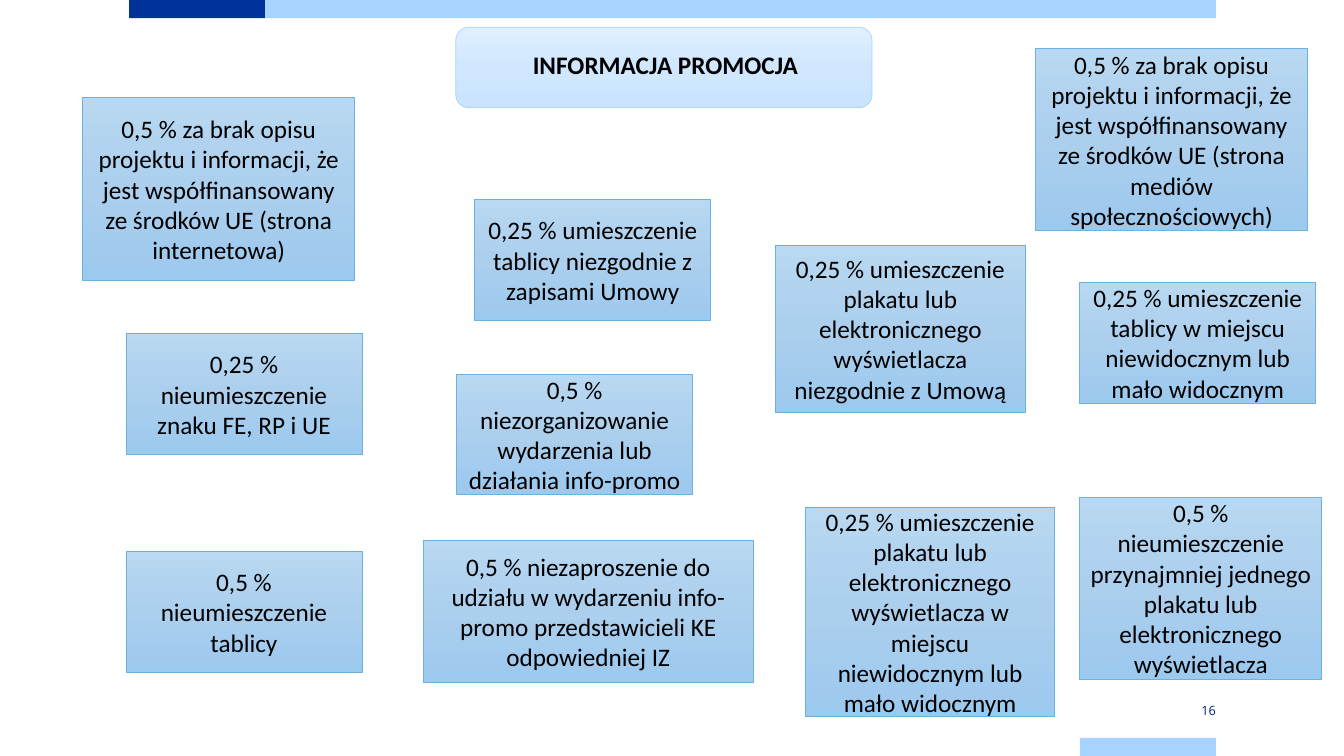
from copy import deepcopy

from pptx import Presentation
from pptx.dml.color import RGBColor
from pptx.enum.shapes import MSO_SHAPE
from pptx.enum.text import MSO_ANCHOR, PP_ALIGN
from pptx.oxml.ns import qn
from pptx.util import Inches, Pt

RECTANGLE = MSO_SHAPE.RECTANGLE
ROUNDED = MSO_SHAPE.FLOWCHART_ALTERNATE_PROCESS
MIDDLE = MSO_ANCHOR.MIDDLE
CENTER, RIGHT = PP_ALIGN.CENTER, PP_ALIGN.RIGHT

BLACK = RGBColor(0x00, 0x00, 0x00)
NAVY = RGBColor(0x00, 0x20, 0x73)
EU_BLUE = RGBColor(0x00, 0x33, 0x99)
SKY = RGBColor(0xA6, 0xD3, 0xFF)
CARD_LINE = RGBColor(0x6B, 0xB1, 0xE2)
CARD_SHADES = (RGBColor(0xB9, 0xD8, 0xF1), RGBColor(0xAB, 0xCF, 0xED),
               RGBColor(0x9C, 0xC9, 0xEE))
HEADING_SHADES = (RGBColor(0xE1, 0xF0, 0xFF), RGBColor(0xD0, 0xE7, 0xFF),
                  RGBColor(0xCA, 0xE4, 0xFF))

SMALL = (2.34, 1.2)
LARGE = (2.7, 1.81)
PENALTIES = [
    (0.82, 0.97, LARGE, "0,5 % za brak opisu projektu i informacji, że jest "
     "współfinansowany ze środków UE (strona internetowa)"),
    (10.27, 0.48, LARGE, "0,5 % za brak opisu projektu i informacji, że jest "
     "współfinansowany ze środków UE (strona mediów społecznościowych)"),
    (1.25, 3.31, SMALL, "0,25 % nieumieszczenie znaku FE, RP i UE"),
    (1.25, 5.47, SMALL, "0,5 % nieumieszczenie tablicy"),
    (7.69, 2.43, (2.48, 1.66), "0,25 % umieszczenie plakatu lub "
     "elektronicznego wyświetlacza niezgodnie z Umową"),
    (4.71, 1.98, SMALL, "0,25 % umieszczenie tablicy niezgodnie z zapisami Umowy"),
    (10.71, 4.93, (2.4, 1.81), "0,5 % nieumieszczenie przynajmniej jednego "
     "plakatu lub elektronicznego wyświetlacza"),
    (4.53, 3.71, SMALL, "0,5 % niezorganizowanie wydarzenia lub działania info-promo"),
    (7.99, 5.03, (2.47, 2.08), "0,25 % umieszczenie plakatu lub elektronicznego "
     "wyświetlacza w miejscu niewidocznym lub mało widocznym"),
    (10.71, 2.8, SMALL, "0,25 % umieszczenie tablicy w miejscu niewidocznym "
     "lub mało widocznym"),
    (4.2, 5.36, (3.27, 1.41), "0,5 % niezaproszenie do udziału w wydarzeniu "
     "info-promo przedstawicieli KE odpowiedniej IZ"),
]


class PenaltySlide:
    font = "Calibri"
    size = 18

    def __init__(self, deck):
        self.slide = deck.slides.add_slide(deck.slide_layouts[5])

    def add_text(self, frame, text, align=CENTER, font=font, size=size,
                 color=BLACK, bold=False):
        frame.word_wrap = True
        frame.vertical_anchor = MIDDLE
        paragraph = frame.paragraphs[0]
        paragraph.alignment = align
        run = paragraph.add_run()
        run.text = text
        run.font.name = font
        run.font.size = Pt(size)
        run.font.color.rgb = color
        run.font.bold = bold

    def block(self, kind, left, top, width, height):
        shape = self.slide.shapes.add_shape(
            kind, Inches(left), Inches(top), Inches(width), Inches(height))
        shape.shadow.inherit = False
        return shape

    def bar(self, left, top, width, color):
        bar = self.block(RECTANGLE, left, top, width, 0.18)
        bar.fill.solid()
        bar.fill.fore_color.rgb = color
        bar.line.fill.background()

    def panel(self, kind, left, top, width, height, shades, line_color):
        panel = self.block(kind, left, top, width, height)
        panel.fill.gradient()
        panel.fill.gradient_angle = 270
        stop_list = panel._element.spPr.find(qn("a:gradFill")).find(qn("a:gsLst"))
        stop_list.append(deepcopy(stop_list[0]))
        for stop, position, shade in zip(panel.fill.gradient_stops, (0, 0.5, 1), shades):
            stop.position = position
            stop.color.rgb = shade
        panel.line.color.rgb = line_color
        panel.line.width = Pt(0.5)
        return panel

    def title(self, text):
        self.panel(ROUNDED, 4.52, 0.27, 4.13, 0.8, HEADING_SHADES, SKY)
        title = self.slide.shapes.title
        title.left, title.top = Inches(4.93), Inches(0.44)
        title.width, title.height = Inches(3.34), Inches(0.4)
        self.add_text(title.text_frame, text, bold=True)
        self.slide.shapes._spTree.append(title._element)

    def card(self, left, top, size, text):
        card = self.panel(RECTANGLE, left, top, *size, CARD_SHADES, CARD_LINE)
        self.add_text(card.text_frame, text)

    def page_number(self, number):
        box = self.slide.shapes.add_textbox(
            Inches(10.71), Inches(6.96), Inches(1.35), Inches(0.18))
        frame = box.text_frame
        frame.margin_left = frame.margin_right = Inches(0)
        frame.margin_top = frame.margin_bottom = Inches(0)
        self.add_text(frame, number, RIGHT, "Open Sans", 9.1, NAVY)


def main():
    deck = Presentation()
    deck.slide_width = Inches(13.33)
    deck.slide_height = Inches(7.5)
    page = PenaltySlide(deck)
    page.bar(1.28, 0, 1.35, EU_BLUE)
    page.bar(2.63, 0, 9.43, SKY)
    page.bar(10.71, 7.32, 1.35, SKY)
    page.page_number("16")
    page.title("INFORMACJA PROMOCJA")
    for penalty in PENALTIES:
        page.card(*penalty)
    deck.save("out.pptx")


if __name__ == "__main__":
    main()
